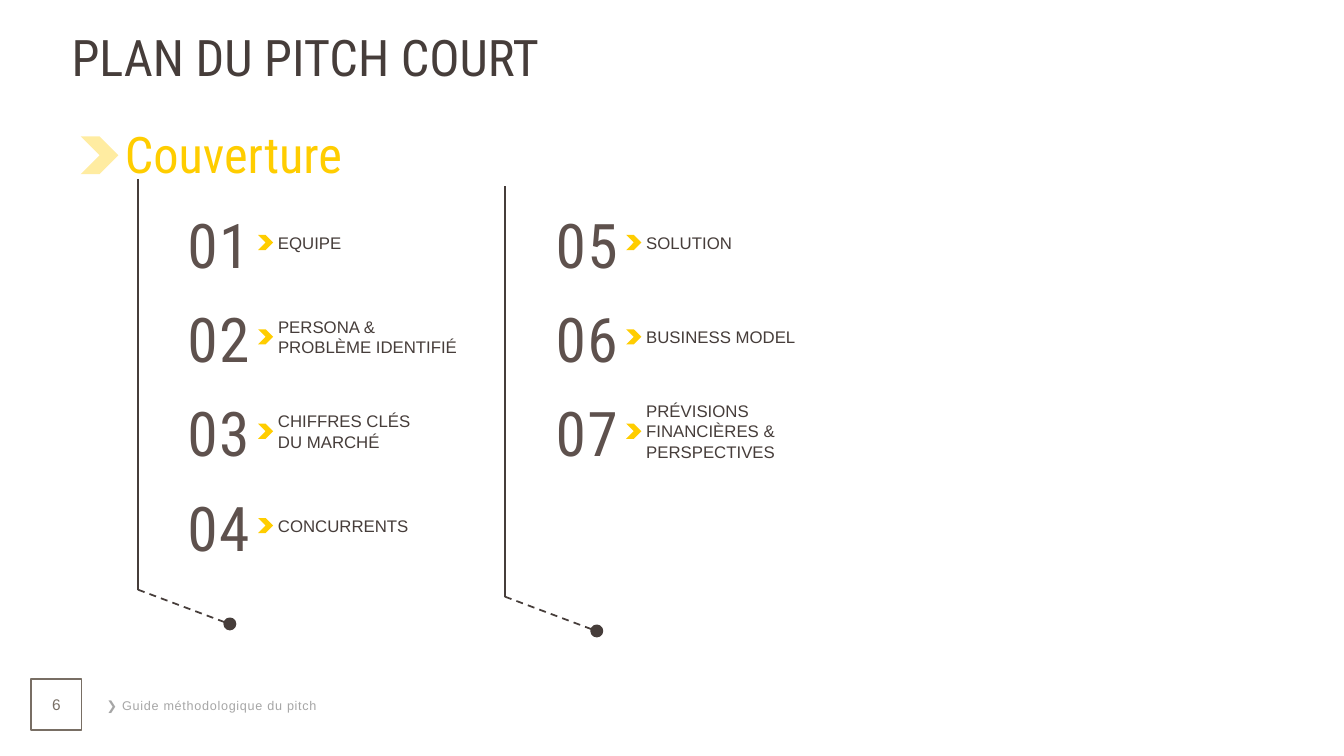
from dataclasses import dataclass

from lxml.etree import SubElement
from pptx import Presentation
from pptx.dml.color import RGBColor
from pptx.enum.dml import MSO_LINE
from pptx.enum.shapes import MSO_CONNECTOR as Link, MSO_SHAPE as Kind
from pptx.enum.text import MSO_ANCHOR as Anchor, MSO_AUTO_SIZE as Fit, PP_ALIGN as Align
from pptx.oxml.ns import qn
from pptx.shapes.autoshape import Shape
from pptx.slide import Slide
from pptx.text.text import TextFrame
from pptx.util import Pt

HUES = {
    "dark": "463D3A",
    "brown": "5E514D",
    "taupe": "786E64",
    "gold": "FFCD00",
    "gray": "A6A6A6",
}
HEAD = "Roboto Condensed"
BODY = "Arial"
STEP = 67.4
SHIFT = 263


@dataclass
class Font:
    name: str
    size: float
    hue: str
    gap: float = 0


@dataclass
class Item:
    text: str
    col: int
    row: int
    lines: int = 1
    wide: float = 115.2


@dataclass
class Rail:
    left: float
    top: float


BIG = Font(HEAD, 44, "brown", 1)
LABEL = Font(BODY, 12, "dark")

ITEMS = [
    Item("EQUIPE", 0, 0),
    Item("PERSONA & PROBLÈME IDENTIFIÉ", 0, 1, 2, 144.7),
    Item("CHIFFRES CLÉS DU MARCHÉ", 0, 2, 2),
    Item("CONCURRENTS", 0, 3),
    Item("SOLUTION", 1, 0),
    Item("BUSINESS MODEL", 1, 1, 1, 126.7),
    Item("PRÉVISIONS FINANCIÈRES & PERSPECTIVES", 1, 2, 3),
]
RAILS = [Rail(98.6, 128.2), Rail(360.7, 133.2)]


def tint(key: str) -> RGBColor:
    return RGBColor.from_string(HUES[key])


def write(frame: TextFrame, text: str, font: Font, align: Align = Align.LEFT) -> None:
    frame.word_wrap = True
    para = frame.paragraphs[0]
    para.alignment = align
    run = para.add_run()
    run.text = text
    run.font.name = font.name
    run.font.size = Pt(font.size)
    run.font.color.rgb = tint(font.hue)
    if font.gap:
        run._r.get_or_add_rPr().set("spc", str(int(font.gap * 100)))


def note(slide: Slide, box: tuple[float, ...], text: str, font: Font,
         align: Align = Align.LEFT) -> None:
    shape = slide.shapes.add_textbox(*map(Pt, box))
    write(shape.text_frame, text, font, align)


def form(slide: Slide, kind: Kind, box: tuple[float, ...], fill: str = "",
         edge: str = "", width: float = 0) -> Shape:
    shape = slide.shapes.add_shape(kind, *map(Pt, box))
    shape.shadow.inherit = False
    if fill:
        shape.fill.solid()
        shape.fill.fore_color.rgb = tint(fill)
    else:
        shape.fill.background()
    if edge:
        shape.line.color.rgb = tint(edge)
        shape.line.width = Pt(width)
    else:
        shape.line.fill.background()
    return shape


def stroke(slide: Slide, ends: tuple[float, ...], dash: bool = False) -> None:
    line = slide.shapes.add_connector(Link.STRAIGHT, *map(Pt, ends))
    line.line.color.rgb = tint("dark")
    line.line.width = Pt(1.25)
    if dash:
        line.line.dash_style = MSO_LINE.DASH
    SubElement(line._element.spPr, qn("a:effectLst"))


def draw_rail(slide: Slide, rail: Rail) -> None:
    x, y = rail.left, rail.top
    foot = y + 293
    stroke(slide, (x, y, x, foot))
    stroke(slide, (x, foot, x + 63.4, foot + 23.8), True)
    form(slide, Kind.OVAL, (x + 62, foot + 20.9, 7.2, 7.2), "dark", "dark", 2)


def draw_item(slide: Slide, rank: int, item: Item) -> None:
    x = item.col * SHIFT
    y = 144 + item.row * STEP
    tall = 7.2 + 14.6 * item.lines
    note(slide, (x + 116.8, y, 78.5, 60.5), f"{rank:02}", BIG, Align.CENTER)
    form(slide, Kind.CHEVRON, (x + 184.3, y + 23.8, 10.8, 10.8), "gold")
    note(slide, (x + 191.5, y + 29.5 - tall / 2, item.wide, tall), item.text, LABEL)


def draw_title(slide: Slide) -> None:
    title = slide.shapes.title
    title.left, title.top, title.width, title.height = map(Pt, (43.9, 19.4, 789, 49))
    frame = title.text_frame
    frame.auto_size = Fit.NONE
    frame.vertical_anchor = Anchor.MIDDLE
    write(frame, "PLAN DU PITCH COURT", Font(HEAD, 36, "dark"))
    frame.paragraphs[0].line_spacing = 0.85
    frame.paragraphs[0].space_after = Pt(9)


def draw_foot(slide: Slide) -> None:
    note(slide, (69.1, 494.6, 199.4, 18), "❯ Guide méthodologique du pitch",
         Font(BODY, 9, "gray", 0.5))
    page = form(slide, Kind.RECTANGLE, (22.3, 485.3, 36, 36), "", "taupe", 1.25)
    page.text_frame.vertical_anchor = Anchor.MIDDLE
    write(page.text_frame, "6", Font(BODY, 11, "taupe"), Align.CENTER)


def draw_cover(slide: Slide) -> None:
    mark = form(slide, Kind.CHEVRON, (57.6, 97.4, 27, 27), "gold")
    color = mark._element.spPr.find(qn("a:solidFill"))[0]
    SubElement(color, qn("a:alpha"), val="37000")
    note(slide, (82.1, 84.4, 203.8, 51), "Couverture", Font(HEAD, 36, "gold"))


def main() -> None:
    deck = Presentation()
    deck.slide_width, deck.slide_height = Pt(960), Pt(540)
    slide = deck.slides.add_slide(deck.slide_layouts[5])
    draw_title(slide)
    draw_foot(slide)
    for rail in RAILS:
        draw_rail(slide, rail)
    draw_cover(slide)
    for rank, item in enumerate(ITEMS, 1):
        draw_item(slide, rank, item)
    deck.save("out.pptx")


if __name__ == "__main__":
    main()
